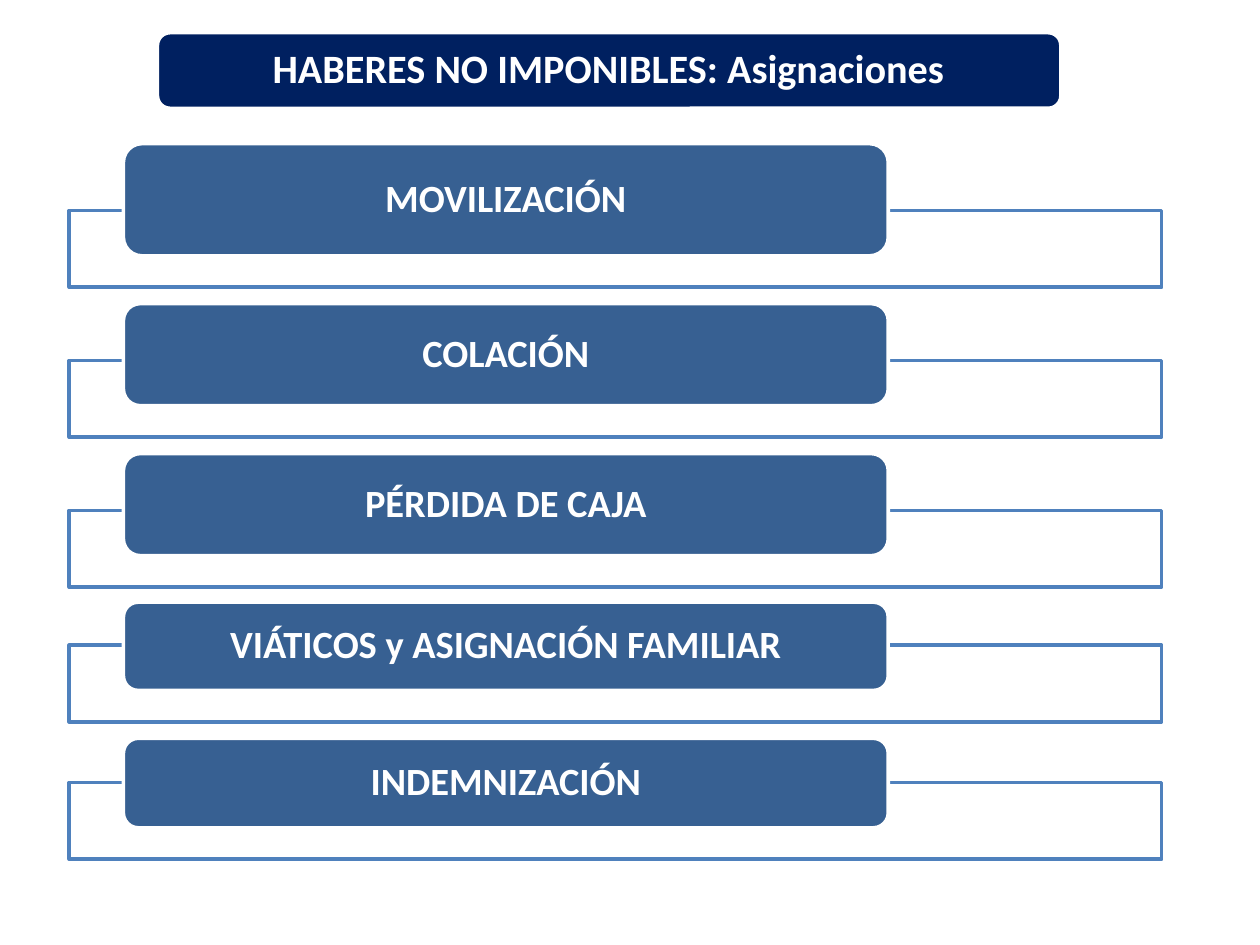
from dataclasses import dataclass

from lxml import etree
from pptx import Presentation
from pptx import util as u
from pptx.dml.color import RGBColor
from pptx.enum import shapes, text
from pptx.oxml.ns import qn


@dataclass(frozen=True)
class Theme:
    font: str = "Calibri"
    white: str = "FFFFFF"
    navy: str = "002060"
    bar: str = "376092"
    frame: str = "4F81BD"
    title_size: int = 23
    bar_size: int = 22
    line_width: int = 2
    frame_opacity: int = 90


THEME = Theme()

FRAME_LEFT, FRAME_WIDTH, FRAME_HEIGHT = 0.55, 8.67, 0.61
BAR_LEFT, BAR_WIDTH = 0.98, 6.07
OVERLAP = 0.36

ALLOWANCES = [
    ("MOVILIZACIÓN", 1.14, 0.89),
    ("COLACIÓN", 2.41, 0.81),
    ("PÉRDIDA DE CAJA", 3.6, 0.81),
    ("VIÁTICOS y ASIGNACIÓN FAMILIAR", 4.78, 0.7),
    ("INDEMNIZACIÓN", 5.86, 0.71),
]


def add_box(page, kind, left, top, width, height, fill, line):
    box = page.shapes.add_shape(
        kind, u.Inches(left), u.Inches(top), u.Inches(width), u.Inches(height)
    )
    box.shadow.inherit = False
    box.fill.solid()
    box.fill.fore_color.rgb = RGBColor.from_string(fill)
    box.line.color.rgb = RGBColor.from_string(line)
    box.line.width = u.Pt(THEME.line_width)
    return box


def add_label(page, label, left, top, width, height, fill, size, inset):
    kind = shapes.MSO_SHAPE.ROUNDED_RECTANGLE
    box = add_box(page, kind, left, top, width, height, fill, THEME.white)
    frame = box.text_frame
    frame.word_wrap = True
    frame.vertical_anchor = text.MSO_ANCHOR.MIDDLE
    frame.margin_left = frame.margin_right = u.Inches(inset)
    frame.margin_top = frame.margin_bottom = 0
    frame.text = label
    para = frame.paragraphs[0]
    para.alignment = text.PP_ALIGN.CENTER
    para.line_spacing = 0.9
    font = para.runs[0].font
    font.name = THEME.font
    font.size = u.Pt(size)
    font.bold = True
    font.color.rgb = RGBColor.from_string(THEME.white)


def add_frame(page, top):
    box = add_box(
        page, shapes.MSO_SHAPE.RECTANGLE, FRAME_LEFT, top,
        FRAME_WIDTH, FRAME_HEIGHT, THEME.white, THEME.frame,
    )
    color = box.fill._xPr.find(qn("a:solidFill"))[0]
    alpha = etree.SubElement(color, qn("a:alpha"))
    alpha.set("val", str(THEME.frame_opacity * 1000))


def add_allowance(page, label, top, height):
    add_frame(page, top + height - OVERLAP)
    add_label(page, label, BAR_LEFT, top, BAR_WIDTH, height,
              THEME.bar, THEME.bar_size, 0.23)


def main():
    deck = Presentation()
    deck.slide_width, deck.slide_height = u.Inches(10), u.Inches(7.5)
    page = deck.slides.add_slide(deck.slide_layouts[6])
    add_label(page, "HABERES NO IMPONIBLES: Asignaciones",
              1.25, 0.26, 7.17, 0.6, THEME.navy, THEME.title_size, 0.1)
    for label, top, height in ALLOWANCES:
        add_allowance(page, label, top, height)
    deck.save("out.pptx")


if __name__ == "__main__":
    main()
